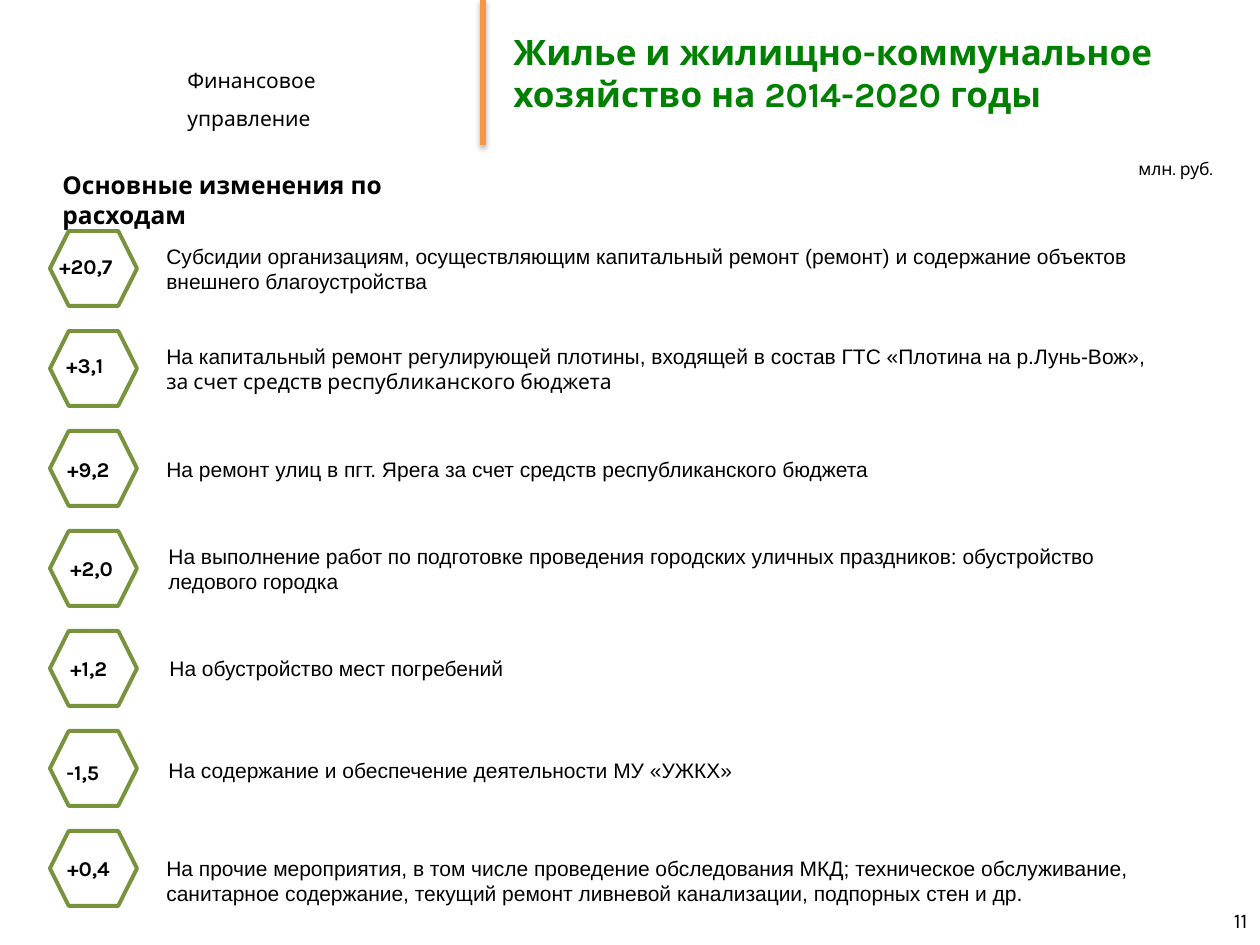
"""Build the slide on changes in housing and utilities spending."""
from dataclasses import dataclass

from lxml import etree
from pptx import Presentation
from pptx import util as u
from pptx.dml.color import RGBColor
from pptx.enum import shapes, text
from pptx.oxml import ns

EMU_PER_PX = 914400 / 126


@dataclass(frozen=True)
class Theme:
    ink: str = "000000"
    title: str = "008000"
    divider: str = "F79646"
    badge: str = "77933C"
    display: str = "Karla"
    body: str = "Arial"
    title_size: int = 20
    heading_size: int = 14
    text_size: int = 12
    small_size: int = 10


def px(length):
    return u.Emu(round(length * EMU_PER_PX))


def write(paragraph, words, *, font, size, color, bold=False, align=None, spacing=None):
    paragraph.alignment = align
    paragraph.line_spacing = spacing
    run = paragraph.add_run()
    run.text = words
    run.font.name = font
    run.font.size = u.Pt(size)
    run.font.bold = bold
    run.font.color.rgb = RGBColor.from_string(color)


class SlideBuilder:
    def __init__(self, slide, theme):
        self.slide = slide
        self.theme = theme

    def label(self, box, *lines, anchor=text.MSO_ANCHOR.TOP, **style):
        """Each line is a (words, font) pair and becomes one paragraph."""
        frame = self.slide.shapes.add_textbox(*map(px, box)).text_frame
        frame.word_wrap = True
        frame.vertical_anchor = anchor
        style = {"size": self.theme.text_size, "color": self.theme.ink, **style}
        for index, (words, font) in enumerate(lines):
            paragraph = frame.add_paragraph() if index else frame.paragraphs[0]
            write(paragraph, words, font=font, **style)

    def divider(self, x, top, bottom):
        line = self.slide.shapes.add_connector(
            shapes.MSO_CONNECTOR.STRAIGHT, px(x), px(top), px(x), px(bottom))
        line.line.color.rgb = RGBColor.from_string(self.theme.divider)
        line.line.width = u.Pt(3)
        effects = etree.SubElement(line._element.spPr, ns.qn("a:effectLst"))
        shadow = etree.SubElement(
            effects, ns.qn("a:outerShdw"), blurRad="40000", dist="23000",
            dir="5400000", rotWithShape="0")
        tint = etree.SubElement(shadow, ns.qn("a:srgbClr"), val=self.theme.ink)
        etree.SubElement(tint, ns.qn("a:alpha"), val="35000")

    def badge(self, left, top, width, height):
        hexagon = self.slide.shapes.add_shape(
            shapes.MSO_SHAPE.HEXAGON, *map(px, (left, top, width, height)))
        hexagon.shadow.inherit = False
        hexagon.fill.background()
        hexagon.line.color.rgb = RGBColor.from_string(self.theme.badge)
        hexagon.line.width = u.Pt(2.25)

    def change(self, top, amount, amount_at, detail_at, *lines):
        self.badge(50, top, 87, 75)
        self.label((*amount_at, 90, 38), (amount, self.theme.display), bold=True)
        self.label((*detail_at, 1029, 38 if len(lines) == 1 else 63), *lines)


def main():
    theme = Theme()
    deck = Presentation()
    deck.slide_width, deck.slide_height = px(1260), px(945)
    builder = SlideBuilder(deck.slides.add_slide(deck.slide_layouts[6]), theme)
    display, body = theme.display, theme.body

    builder.label((175, 49, 265, 45), ("Финансовое управление", display), spacing=1.5)
    builder.divider(483, 0, 145)
    builder.label(
        (501, 0, 759, 145), ("Жилье и жилищно-коммунальное хозяйство на 2014-2020 годы", display),
        anchor=text.MSO_ANCHOR.MIDDLE, size=theme.title_size, color=theme.title, bold=True)
    builder.label((1126, 152, 110, 34), ("млн. руб.", display), size=theme.small_size)
    builder.label(
        (50, 164, 473, 43), ("Основные изменения по расходам", display),
        size=theme.heading_size, bold=True)

    changes = [
        ("+20,7", (47, 247), (154, 237),
         ("Субсидии организациям, осуществляющим капитальный ремонт (ремонт) и содержание "
          "объектов внешнего благоустройства", body)),
        ("+3,1", (54, 346), (154, 337),
         ("На капитальный ремонт регулирующей плотины, входящей в состав ГТС "
          "«Плотина на р.Лунь-Вож»,", body),
         ("за счет средств республиканского бюджета", display)),
        ("+9,2", (55, 450), (154, 450),
         ("На ремонт улиц в пгт. Ярега за счет средств республиканского бюджета", body)),
        ("+2,0", (58, 549), (156, 537),
         ("На выполнение работ по подготовке проведения городских уличных праздников: "
          "обустройство ледового городка", body)),
        ("+1,2", (58, 649), (157, 649), ("На обустройство мест погребений", body)),
        ("-1,5", (54, 753), (156, 751),
         ("На содержание и обеспечение деятельности МУ «УЖКХ»", body)),
        ("+0,4", (55, 849), (154, 849),
         ("На прочие мероприятия, в том числе проведение обследования МКД; техническое "
          "обслуживание, санитарное содержание, текущий ремонт ливневой канализации, "
          "подпорных стен и др.", body)),
    ]
    for row, change in enumerate(changes):
        builder.change(231 + 100 * row, *change)

    builder.label(
        (966, 895, 294, 50), ("11", display),
        anchor=text.MSO_ANCHOR.MIDDLE, align=text.PP_ALIGN.RIGHT)
    deck.save("out.pptx")


if __name__ == "__main__":
    main()
